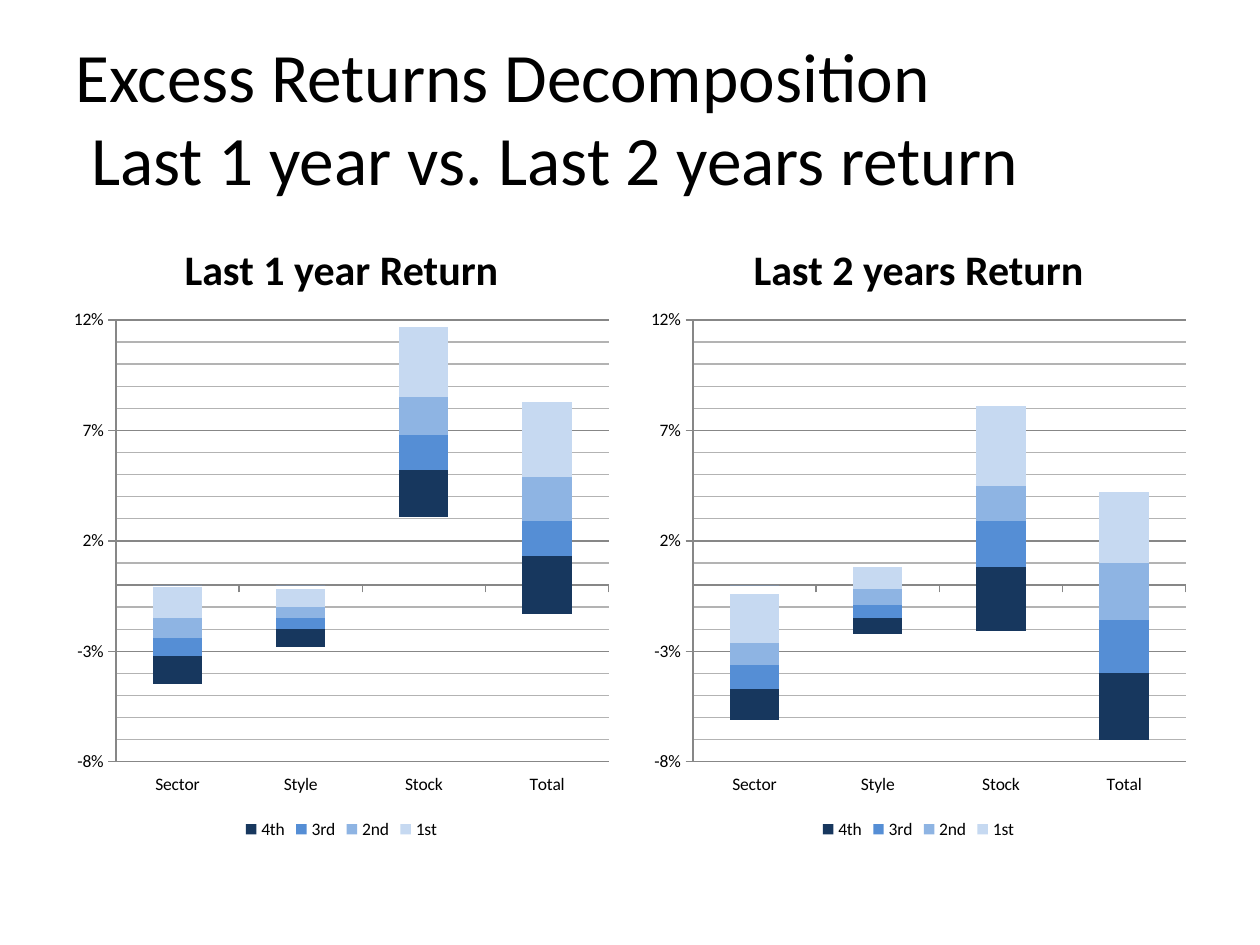
from dataclasses import dataclass

from lxml import etree
from pptx import Presentation
from pptx import util as u
from pptx.chart.data import CategoryChartData
from pptx.dml.color import RGBColor
from pptx.enum import chart as ch
from pptx.enum import text as tx
from pptx.oxml.ns import qn


@dataclass(frozen=True)
class Theme:
    font: str = "Calibri"
    ink: str = "000000"
    axis: str = "878787"
    minor: str = "B3B3B3"
    title: float = 39.6
    head: float = 24
    label: float = 10


@dataclass(frozen=True)
class Panel:
    head: str
    left: float
    rows: tuple[tuple[float, ...], ...]


THEME = Theme()
WIDTH = 4.42
CATS = ("Sector", "Style", "Stock", "Total")
SHADES = ("17375E", "558ED5", "8EB4E3", "C6D9F1")
FILLS = (None, *SHADES, None, *reversed(SHADES))
NAMES = ("Series 1", "4th", "3rd", "2nd", "1st",
         *(f"Series {n}" for n in range(6, 11)))
HIDDEN = (0, 5, 6, 7, 8, 9)
PLOT = {"x": 0.095, "y": 0.037, "w": 0.885, "h": 0.812}

PANELS = (
    Panel("Last 1 year Return", 0.5, (
        (0, 0, 0.031, 0),
        (0, 0, 0.021, 0.013),
        (0, 0, 0.016, 0.016),
        (0, 0, 0.017, 0.02),
        (0, 0, 0.032, 0.034),
        (-0.001, -0.002, 0, 0),
        (-0.014, -0.008, 0, 0),
        (-0.009, -0.005, 0, 0),
        (-0.008, -0.005, 0, 0),
        (-0.013, -0.008, 0, -0.013),
    )),
    Panel("Last 2 years Return", 5.08, (
        (0, 0, 0, 0),
        (0, 0, 0.008, 0),
        (0, 0, 0.021, 0),
        (0, 0, 0.016, 0.01),
        (0, 0.008, 0.036, 0.032),
        (-0.004, 0, 0, 0),
        (-0.022, -0.002, 0, 0),
        (-0.01, -0.007, 0, -0.016),
        (-0.011, -0.006, 0, -0.024),
        (-0.014, -0.007, -0.021, -0.03),
    )),
)


def rgb(code: str) -> RGBColor:
    return RGBColor.from_string(code)


def style(font, size: float, bold: bool = False) -> None:
    font.name, font.size, font.bold = THEME.font, u.Pt(size), bold
    font.color.rgb = rgb(THEME.ink)


def place(shape, left: float, top: float, width: float, height: float) -> None:
    shape.left, shape.top = u.Inches(left), u.Inches(top)
    shape.width, shape.height = u.Inches(width), u.Inches(height)


def write(shape, lines: tuple[str, ...], size: float, align, anchor,
          bold: bool = False) -> None:
    """Fill a placeholder with one paragraph, broken into lines."""
    frame = shape.text_frame
    frame.word_wrap, frame.vertical_anchor = True, anchor
    para = frame.paragraphs[0]
    para.alignment, para.space_before = align, u.Pt(0)
    for i, line in enumerate(lines):
        if i:
            para.add_line_break()
        run = para.add_run()
        run.text = line
        style(run.font, size, bold)


def rule(line, code: str) -> None:
    line.color.rgb, line.width = rgb(code), u.Pt(0.75)


def rule_minor(axis, code: str) -> None:
    """Colour the minor gridlines, which have no format object."""
    grid = axis._element.find(qn("c:minorGridlines"))
    props = etree.SubElement(grid, qn("c:spPr"))
    line = etree.SubElement(props, qn("a:ln"), w=str(u.Pt(0.75)))
    fill = etree.SubElement(line, qn("a:solidFill"))
    etree.SubElement(fill, qn("a:srgbClr"), val=code)


def trim(legend) -> None:
    """Hide the legend entries of the helper series."""
    node = legend._element
    spot = node.find(qn("c:legendPos"))
    for idx in reversed(HIDDEN):
        entry = etree.Element(qn("c:legendEntry"))
        etree.SubElement(entry, qn("c:idx")).set("val", str(idx))
        etree.SubElement(entry, qn("c:delete")).set("val", "1")
        spot.addnext(entry)


def fix_plot(chart) -> None:
    """Set the inner plot area as shares of the chart's size."""
    area = chart._chartSpace.find(".//" + qn("c:plotArea"))
    old = area.find(qn("c:layout"))
    if old is not None:
        area.remove(old)
    lay = etree.Element(qn("c:layout"))
    area.insert(0, lay)
    man = etree.SubElement(lay, qn("c:manualLayout"))
    modes = {"layoutTarget": "inner", "xMode": "edge", "yMode": "edge"}
    for tag, val in (modes | PLOT).items():
        etree.SubElement(man, qn("c:" + tag)).set("val", str(val))


def draw_chart(slide, panel: Panel) -> None:
    data = CategoryChartData(number_format="0.0%")
    data.categories = CATS
    for name, row in zip(NAMES, panel.rows):
        data.add_series(name, row)
    chart = slide.shapes.add_chart(
        ch.XL_CHART_TYPE.COLUMN_STACKED, u.Inches(panel.left), u.Inches(2.38),
        u.Inches(WIDTH), u.Inches(4.32), data).chart
    style(chart.font, THEME.label)
    chart.has_title = False

    plot = chart.plots[0]
    plot.gap_width, plot.overlap, plot.vary_by_categories = 150, 100, False
    for ser, code in zip(plot.series, FILLS):
        ser.invert_if_negative = False
        ser.format.line.fill.background()
        if code:
            ser.format.fill.solid()
            ser.format.fill.fore_color.rgb = rgb(code)
        else:
            ser.format.fill.background()

    val, cat = chart.value_axis, chart.category_axis
    val.minimum_scale, val.maximum_scale = -0.08, 0.12
    val.major_unit, val.minor_unit = 0.05, 0.01
    val.has_major_gridlines = val.has_minor_gridlines = True
    rule(val.major_gridlines.format.line, THEME.axis)
    rule_minor(val, THEME.minor)
    val.tick_labels.number_format = "0%"
    val.tick_labels.number_format_is_linked = False
    cat.tick_label_position = ch.XL_TICK_LABEL_POSITION.LOW
    for axis in (val, cat):
        axis.major_tick_mark = ch.XL_TICK_MARK.OUTSIDE
        axis.minor_tick_mark = ch.XL_TICK_MARK.NONE
        rule(axis.format.line, THEME.axis)

    chart.has_legend = True
    chart.legend.position = ch.XL_LEGEND_POSITION.BOTTOM
    chart.legend.include_in_layout = False
    trim(chart.legend)
    fix_plot(chart)


def main() -> None:
    prs = Presentation()
    prs.slide_width, prs.slide_height = u.Inches(10), u.Inches(7.5)
    slide = prs.slides.add_slide(prs.slide_layouts.get_by_name("Comparison"))
    title, *rest = slide.placeholders
    heads, spare = rest[0::2], rest[1::2]
    for item in spare:
        item.element.getparent().remove(item.element)

    place(title, 0.5, 0.3, 9, 1.25)
    write(title, ("Excess Returns Decomposition",
                  " Last 1 year vs. Last 2 years return"),
          THEME.title, tx.PP_ALIGN.LEFT, tx.MSO_ANCHOR.MIDDLE)
    for head, panel in zip(heads, PANELS):
        place(head, panel.left, 1.68, WIDTH, 0.7)
        write(head, (panel.head,), THEME.head, tx.PP_ALIGN.CENTER,
              tx.MSO_ANCHOR.BOTTOM, True)
        draw_chart(slide, panel)
    prs.save("out.pptx")


if __name__ == "__main__":
    main()
